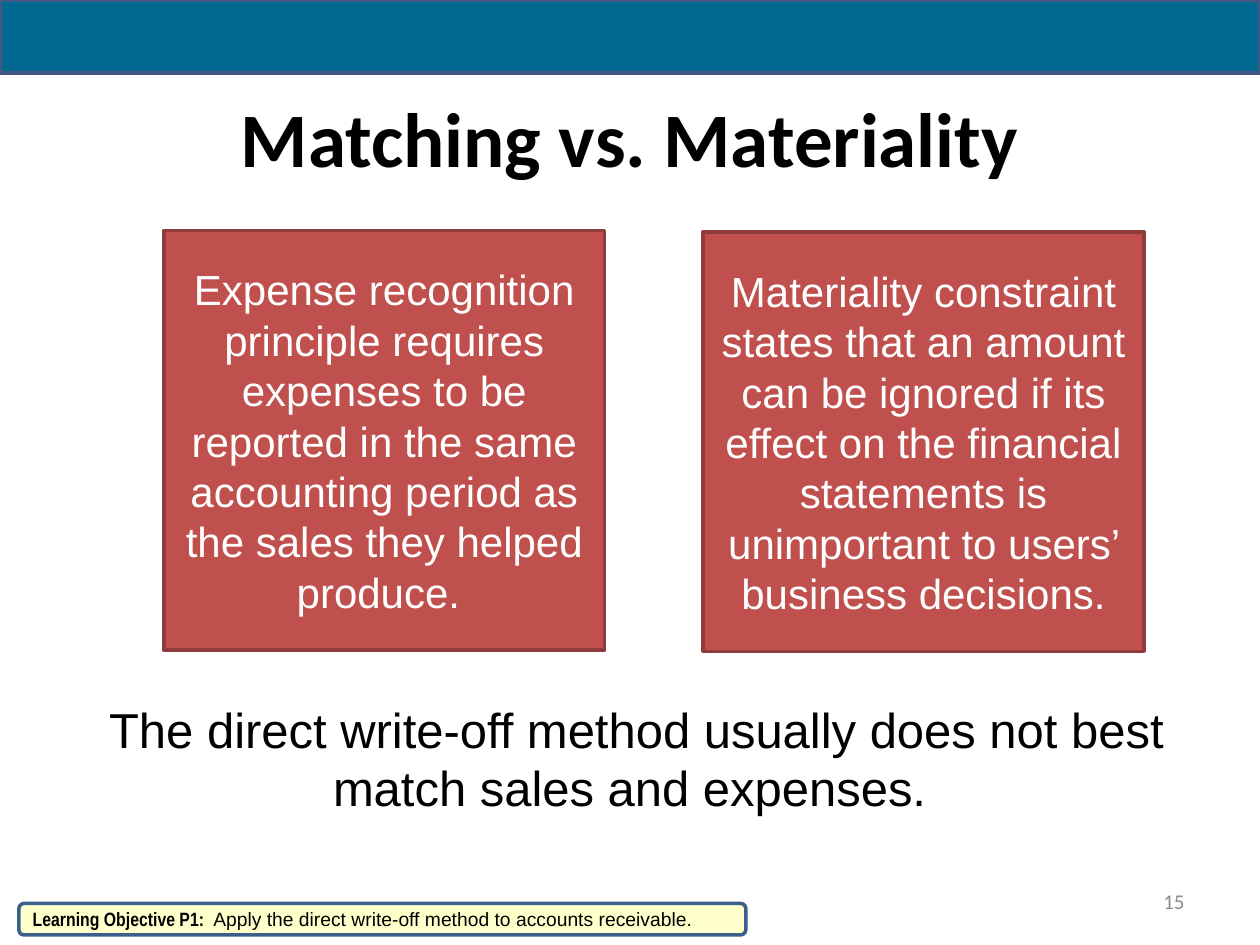
"""Build the Matching vs. Materiality slide."""
from pptx import Presentation
from pptx import util as u
from pptx.dml.color import RGBColor
from pptx.enum import shapes, text

COLOURS = {
    "band": "006991", "band_edge": "475785",
    "card": "C0504D", "card_edge": "8E3B39",
    "note": "FFFFCC", "note_edge": "3A5F8C",
    "ink": "000000", "white": "FFFFFF", "grey": "8C8C8C",
}
RECT = shapes.MSO_SHAPE.RECTANGLE
ROUNDED = shapes.MSO_SHAPE.ROUNDED_RECTANGLE
LEFT, CENTRE, RIGHT = text.PP_ALIGN.LEFT, text.PP_ALIGN.CENTER, text.PP_ALIGN.RIGHT
TOP, MIDDLE = text.MSO_ANCHOR.TOP, text.MSO_ANCHOR.MIDDLE

TITLE_FONT = {"name": "Calibri", "size": u.Pt(44), "bold": True}
CARD_FONT = {"name": "Arial", "size": u.Pt(24)}
SUMMARY_FONT = {"name": "Arial", "size": u.Pt(28)}
NUMBER_FONT = {"name": "Calibri", "size": u.Pt(12)}
LABEL_FONT = {"name": "Arial Narrow", "size": u.Pt(11), "bold": True}
OBJECTIVE_FONT = {"name": "Arial", "size": u.Pt(11)}

CARDS = [
    (1.3, 1.83, "Expense recognition principle requires expenses to be reported "
                "in the same accounting period as the sales they helped produce. "),
    (5.58, 1.84, "Materiality constraint states that an amount can be ignored if its "
                 "effect on the financial statements is unimportant to users’ "
                 "business decisions."),
]
CARD_SIZE = (3.5, 3.33)
TEXTS = [
    ((0.5, 0.5, 9, 1.17), "Matching vs. Materiality", TITLE_FONT, "ink", CENTRE, MIDDLE),
    ((0.51, 5.5, 9.08, 1.04),
     "The direct write-off method usually does not best match sales and expenses. ",
     SUMMARY_FONT, "ink", CENTRE, TOP),
    ((7.17, 6.95, 2.33, 0.4), "15", NUMBER_FONT, "grey", RIGHT, MIDDLE),
]
OBJECTIVE = [
    ("Learning Objective P1:  ", LABEL_FONT),
    ("Apply the direct write-off method to accounts receivable.", OBJECTIVE_FONT),
]


def colour(name):
    return RGBColor.from_string(COLOURS[name])


def write(box, spans, ink, align, anchor):
    frame = box.text_frame
    frame.word_wrap = True
    frame.vertical_anchor = anchor
    para = frame.paragraphs[0]
    para.alignment = align
    for words, formats in spans:
        span = para.add_run()
        span.text = words
        span.font.color.rgb = colour(ink)
        for key, value in formats.items():
            setattr(span.font, key, value)


def add_panel(page, kind, place, fill, width):
    panel = page.shapes.add_shape(kind, *map(u.Inches, place))
    panel.shadow.inherit = False
    panel.fill.solid()
    panel.fill.fore_color.rgb = colour(fill)
    panel.line.color.rgb = colour(fill + "_edge")
    panel.line.width = u.Pt(width)
    return panel


def main():
    deck = Presentation()
    deck.slide_width, deck.slide_height = u.Inches(10), u.Inches(7.5)
    page = deck.slides.add_slide(deck.slide_layouts[6])
    for place, words, formats, ink, align, anchor in TEXTS:
        box = page.shapes.add_textbox(*map(u.Inches, place))
        write(box, [(words, formats)], ink, align, anchor)
    for left, top, words in CARDS:
        card = add_panel(page, RECT, (left, top, *CARD_SIZE), "card", 2)
        write(card, [(words, CARD_FONT)], "white", CENTRE, MIDDLE)
    add_panel(page, RECT, (0, 0, 10, 0.58), "band", 2.25)
    note = add_panel(page, ROUNDED, (0.15, 7.17, 5.77, 0.25), "note", 2)
    write(note, OBJECTIVE, "ink", LEFT, MIDDLE)
    deck.save("out.pptx")


if __name__ == "__main__":
    main()
